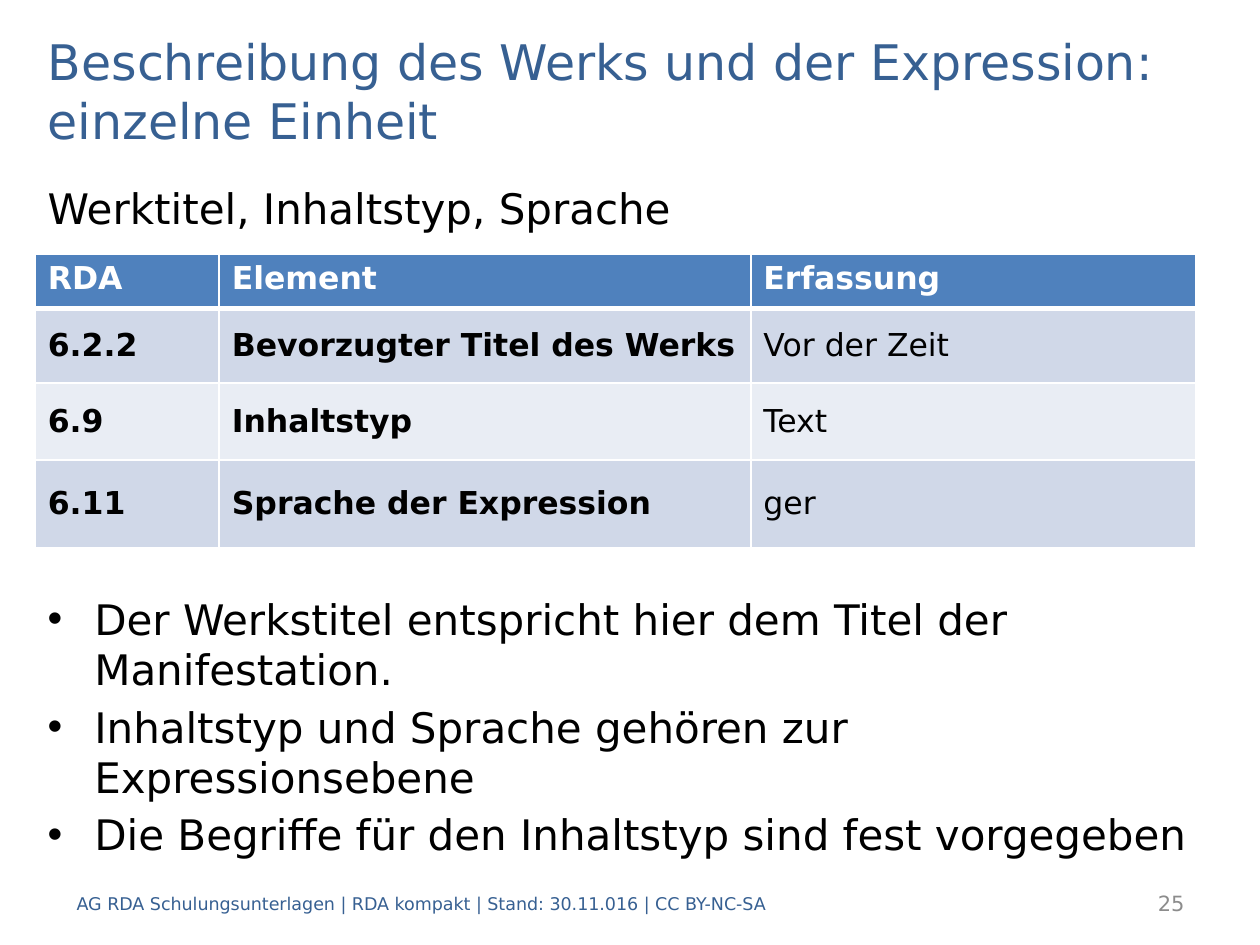
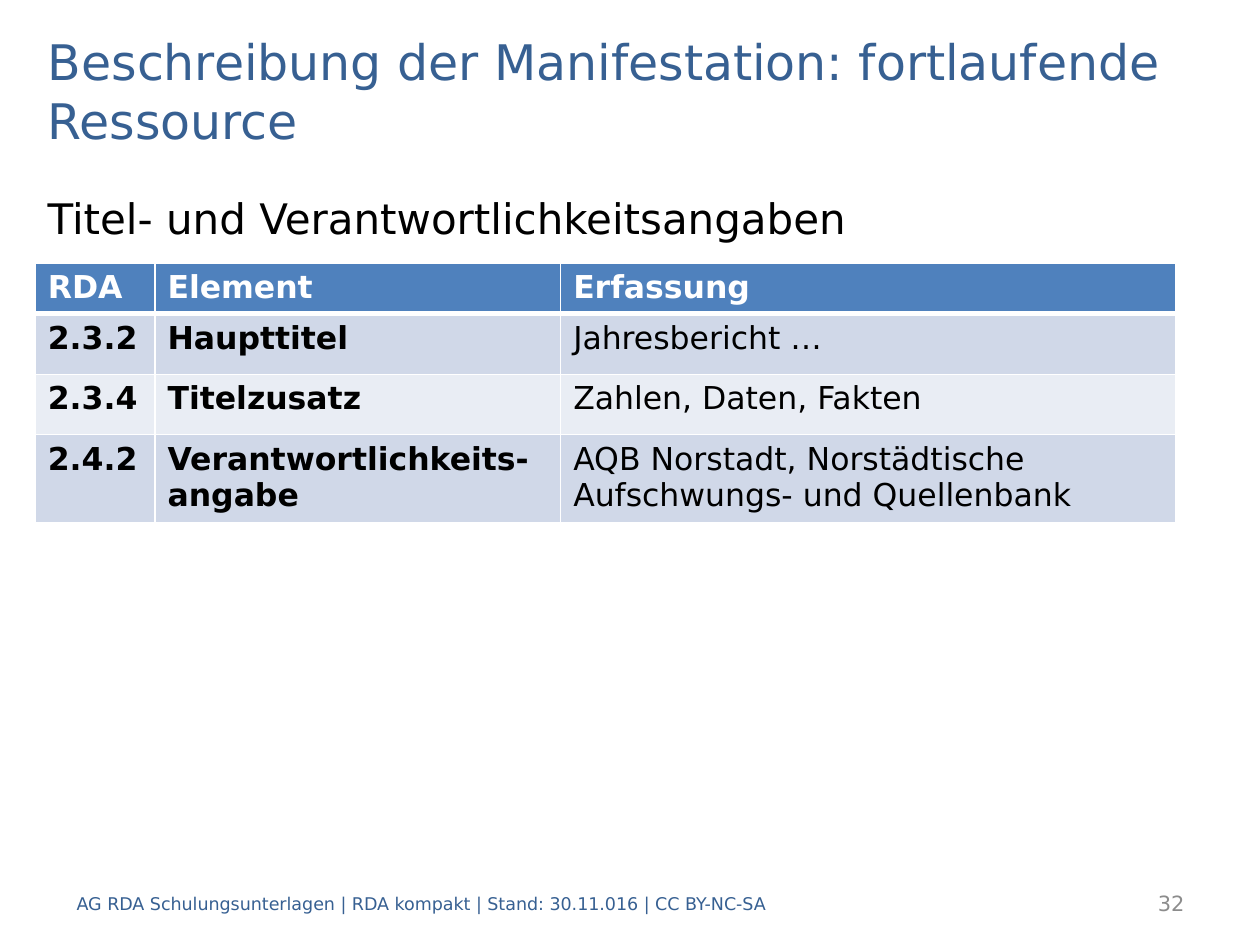
from dataclasses import dataclass
from lxml.etree import SubElement as Sub
from pptx import Presentation as Deck
from pptx.dml.color import RGBColor as Rgb
from pptx.enum.text import MSO_ANCHOR as Anchor, MSO_AUTO_SIZE as Fit, PP_ALIGN as Align
from pptx.oxml.ns import qn
from pptx.util import Inches, Pt


@dataclass(frozen=True)
class Theme:
    font: str = "DejaVu Sans"
    blue: str = "376092"
    grey: str = "8C8C8C"
    black: str = "000000"
    white: str = "FFFFFF"
    head: str = "4F81BD"
    bands: tuple = ("D0D8E8", "E9EDF4")
    title: int = 28
    body: int = 24
    cell: int = 18
    page: int = 12
    foot: int = 10
    rule: int = 3
    gap: int = 4
    hang: float = 3.7


class Maker:
    COLS, ROWS = 100, 75
    LEFT, WIDE = 2.8, 94.5

    def __init__(self, theme):
        self.theme = theme
        self.deck = Deck()
        self.deck.slide_width, self.deck.slide_height = Inches(10), Inches(7.5)
        self.slide = None

    def x(self, cols):
        return round(self.deck.slide_width * cols / self.COLS)

    def y(self, rows):
        return round(self.deck.slide_height * rows / self.ROWS)

    def area(self, left, top, wide, high):
        return self.x(left), self.y(top), self.x(wide), self.y(high)

    def style(self, para, size, color, bold=False):
        font = para.font
        font.name, font.size, font.bold = self.theme.font, Pt(size), bold
        font.color.rgb = Rgb.from_string(color)

    def begin(self, title):
        self.slide = self.deck.slides.add_slide(self.deck.slide_layouts[5])
        shape = self.slide.shapes.title
        shape.left, shape.top, shape.width, shape.height = self.area(
            self.LEFT, 2, self.WIDE, 10.3)
        frame = shape.text_frame
        frame.text = title
        frame.auto_size, frame.vertical_anchor = Fit.NONE, Anchor.MIDDLE
        para = frame.paragraphs[0]
        para.alignment = Align.LEFT
        self.style(para, self.theme.title, self.theme.blue)

    def text(self, area, lines, size, color, anchor=Anchor.TOP, align=Align.LEFT):
        frame = self.slide.shapes.add_textbox(*self.area(*area)).text_frame
        frame.word_wrap, frame.vertical_anchor = True, anchor
        frame.text = "\n".join(lines)
        for para in frame.paragraphs:
            para.alignment = align
            self.style(para, size, color)
        return frame.paragraphs

    def body(self, top, high, lines):
        paras = self.text((self.LEFT, top, self.WIDE, high), lines,
                          self.theme.body, self.theme.black)
        for para in paras:
            para.space_after = Pt(self.theme.gap)
        return paras

    def bullets(self, top, high, lines):
        hang = self.x(self.theme.hang)
        for para in self.body(top, high, lines):
            props = para._p.get_or_add_pPr()
            props.set("marL", str(hang))
            props.set("indent", str(-hang))
            Sub(props, qn("a:buFont")).set("typeface", "Arial")
            Sub(props, qn("a:buChar")).set("char", "•")

    def rule(self, cell):
        props = cell._tc.get_or_add_tcPr()
        line = Sub(props, qn("a:lnB"), w=str(Pt(self.theme.rule)))
        fill = Sub(line, qn("a:solidFill"))
        Sub(fill, qn("a:srgbClr"), val=self.theme.white)
        props.insert(0, line)

    def table(self, top, cols, rows, data, anchor=Anchor.TOP):
        area = self.area(self.LEFT, top, sum(cols), sum(rows))
        grid = self.slide.shapes.add_table(len(rows), len(cols), *area).table
        for col, wide in zip(grid.columns, cols):
            col.width = self.x(wide)
        for row, high in zip(grid.rows, rows):
            row.height = self.y(high)
        look = self.theme
        for r, words in enumerate((("RDA", "Element", "Erfassung"), *data)):
            fill = look.bands[(r - 1) % 2] if r else look.head
            color = look.black if r else look.white
            for c, word in enumerate(words):
                cell = grid.cell(r, c)
                cell.text = word
                cell.vertical_anchor = anchor if r else Anchor.TOP
                cell.fill.solid()
                cell.fill.fore_color.rgb = Rgb.from_string(fill)
                self.style(cell.text_frame.paragraphs[0], look.cell, color,
                           r == 0 or c < 2)
                if r == 0:
                    self.rule(cell)

    def footer(self, page):
        look = self.theme
        note = "AG RDA Schulungsunterlagen | RDA kompakt | Stand: 30.11.016 | CC BY-NC-SA"
        self.text((79.1, 69.7, 15.9, 4), [str(page)], look.page, look.grey,
                  Anchor.MIDDLE, Align.RIGHT)
        self.text((5.1, 69.7, 87, 4), [note], look.foot, look.blue, Anchor.MIDDLE)


def main():
    make = Maker(Theme())

    make.begin("Beschreibung des Werks und der Expression: einzelne Einheit")
    make.body(14, 5, ["Werktitel, Inhaltstyp, Sprache"])
    make.table(20.2, (14.6, 42.2, 35.3), (4.3, 5.9, 6.1, 7), (
        ("6.2.2", "Bevorzugter Titel des Werks", "Vor der Zeit"),
        ("6.9", "Inhaltstyp", "Text"),
        ("6.11", "Sprache der Expression", "ger"),
    ), Anchor.MIDDLE)
    make.bullets(46.6, 22.4, [
        "Der Werkstitel entspricht hier dem Titel der Manifestation.",
        "Inhaltstyp und Sprache gehören zur Expressionsebene",
        "Die Begriffe für den Inhaltstyp sind fest vorgegeben",
    ])
    make.footer(25)

    make.begin("Beschreibung der Manifestation: fortlaufende Ressource")
    make.body(14.8, 5, ["Titel- und Verantwortlichkeitsangaben"])
    make.table(20.9, (9.5, 32.2, 48.8), (4, 4.8, 4.8, 6.6), (
        ("2.3.2", "Haupttitel", "Jahresbericht …"),
        ("2.3.4", "Titelzusatz", "Zahlen, Daten, Fakten"),
        ("2.4.2", "Verantwortlichkeits-angabe",
         "AQB Norstadt, Norstädtische Aufschwungs- und Quellenbank"),
    ))
    make.footer(32)

    make.deck.save("out.pptx")


if __name__ == "__main__":
    main()
